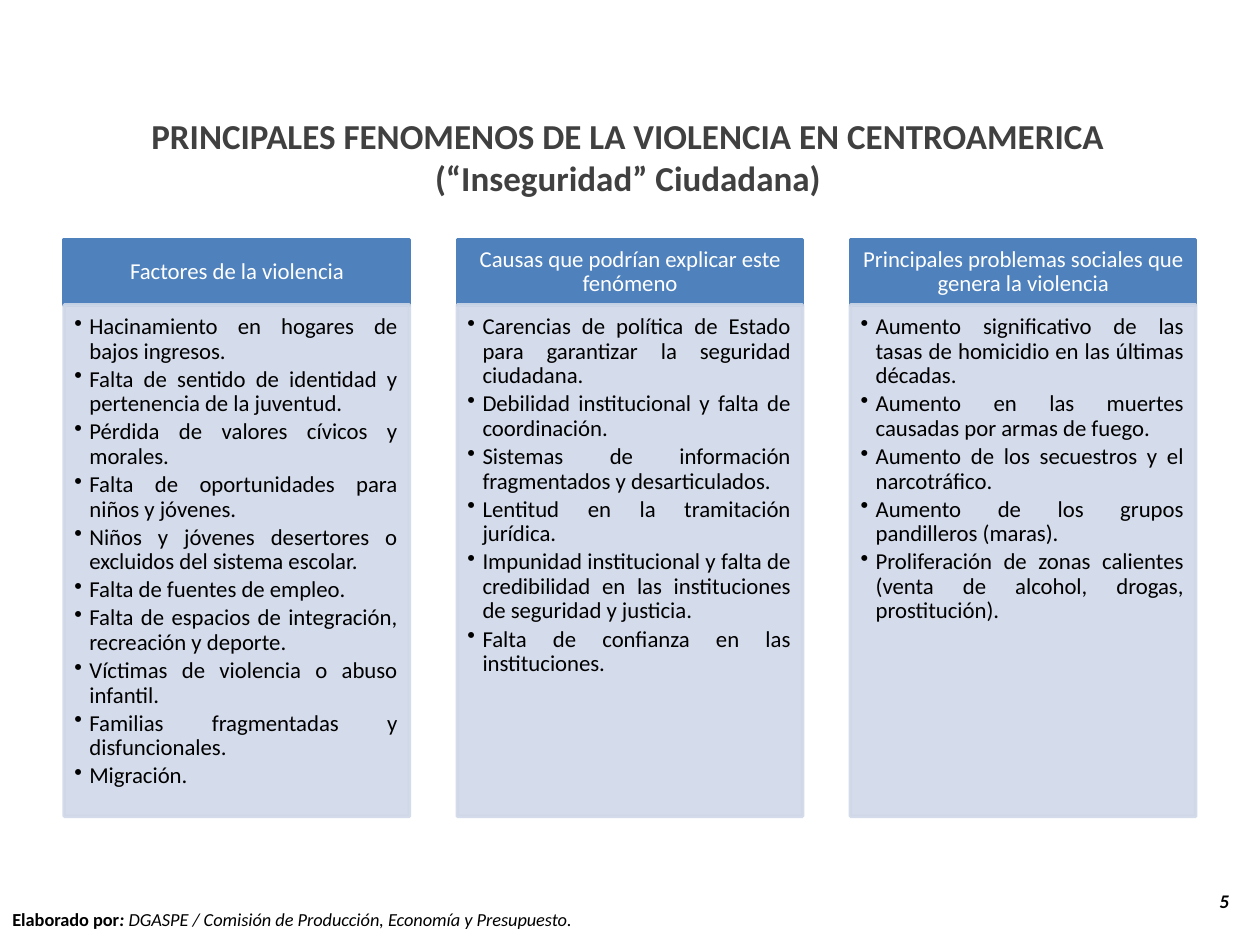
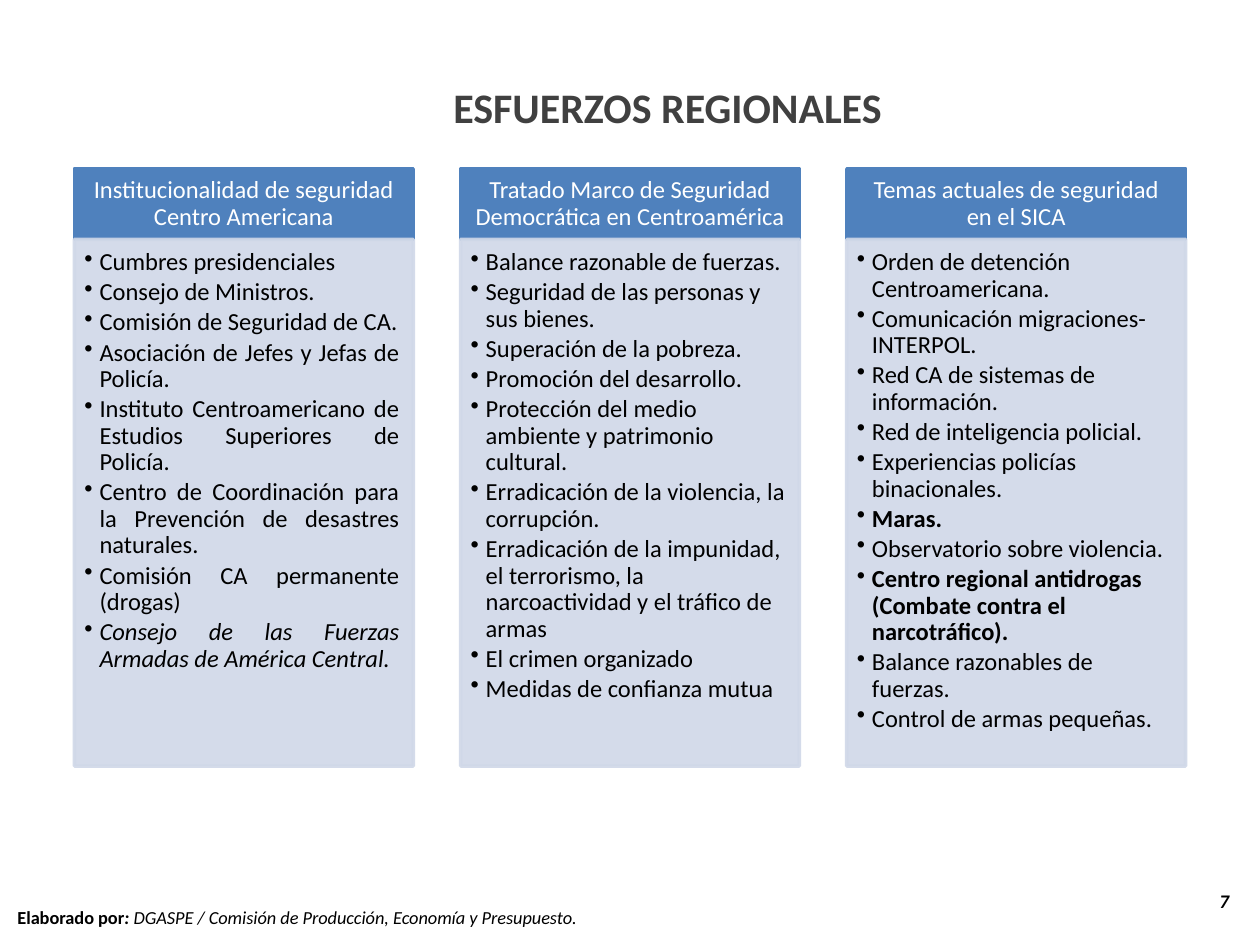
from dataclasses import dataclass

from lxml import etree
from pptx import Presentation
from pptx.dml.color import RGBColor
from pptx.enum.shapes import MSO_SHAPE
from pptx.enum.text import MSO_ANCHOR, MSO_AUTO_SIZE, PP_ALIGN
from pptx.oxml.ns import qn
from pptx.util import Inches, Pt

RECT = MSO_SHAPE.RECTANGLE
LEFT, CENTER, JUSTIFY = PP_ALIGN.LEFT, PP_ALIGN.CENTER, PP_ALIGN.JUSTIFY
TOP, MIDDLE = MSO_ANCHOR.TOP, MSO_ANCHOR.MIDDLE
FIT_TEXT = MSO_AUTO_SIZE.SHAPE_TO_FIT_TEXT


@dataclass(frozen=True)
class Theme:
    font: str = "Calibri"
    title: RGBColor = RGBColor(0x40, 0x40, 0x40)
    header: RGBColor = RGBColor(0x4F, 0x81, 0xBD)
    panel: RGBColor = RGBColor(0xD0, 0xD8, 0xE8)
    white: RGBColor = RGBColor(0xFF, 0xFF, 0xFF)
    black: RGBColor = RGBColor(0, 0, 0)
    panel_opacity: int = 90
    border: float = 2
    credit_size: float = 10.5
    number_size: float = 11


THEME = Theme()


@dataclass(frozen=True)
class ColumnLayout:
    """Three columns centred on the slide; lengths in inches, size in points."""
    left: float
    top: float
    width: float
    header_height: float
    panel_height: float
    size: float
    side_inset: float
    bottom_inset: float

    def column_left(self, index):
        pitch = 5 - self.width / 2 - self.left
        return self.left + index * pitch


VIOLENCE_LAYOUT = ColumnLayout(0.51, 1.9, 2.74, 0.52, 4.06, 13, 0.1, 0.11)
EFFORTS_LAYOUT = ColumnLayout(0.59, 1.34, 2.69, 0.56, 4.18, 14, 0.11, 0.12)

# Each column: header, alignment of its items, items.
VIOLENCE_COLUMNS = [
    ("Factores de la violencia", JUSTIFY, [
        "Hacinamiento en hogares de bajos ingresos.",
        "Falta de sentido de identidad y pertenencia de la juventud.",
        "Pérdida de valores cívicos y morales.",
        "Falta de oportunidades para niños y jóvenes.",
        "Niños y jóvenes desertores o excluidos del sistema escolar.",
        "Falta de fuentes de empleo.",
        "Falta de espacios de integración, recreación y deporte.",
        "Víctimas de violencia o abuso infantil.",
        "Familias fragmentadas y disfuncionales.",
        "Migración.",
    ]),
    ("Causas que podrían explicar este fenómeno", JUSTIFY, [
        "Carencias de política de Estado para garantizar la seguridad ciudadana.",
        "Debilidad institucional y falta de coordinación.",
        "Sistemas de información fragmentados y desarticulados.",
        "Lentitud en la tramitación jurídica.",
        "Impunidad institucional y falta de credibilidad en las instituciones "
        "de seguridad y justicia.",
        "Falta de confianza en las instituciones.",
    ]),
    ("Principales problemas sociales que genera la violencia", JUSTIFY, [
        "Aumento significativo de las tasas de homicidio en las últimas décadas.",
        "Aumento en las muertes causadas por armas de fuego.",
        "Aumento de los secuestros y el narcotráfico.",
        "Aumento de los grupos pandilleros (maras).",
        "Proliferación de zonas calientes (venta de alcohol, drogas, prostitución).",
    ]),
]

EFFORTS_COLUMNS = [
    ("Institucionalidad de seguridad Centro Americana", JUSTIFY, [
        "Cumbres presidenciales",
        "Consejo de Ministros.",
        "Comisión de Seguridad de CA.",
        "Asociación de Jefes y Jefas de Policía.",
        "Instituto Centroamericano de Estudios Superiores de Policía.",
        "Centro de Coordinación para la Prevención de desastres naturales.",
        "Comisión CA permanente (drogas)",
        "Consejo de las Fuerzas Armadas de América Central.",
    ]),
    ("Tratado Marco de Seguridad Democrática en Centroamérica", LEFT, [
        "Balance razonable de fuerzas.",
        "Seguridad de las personas y sus bienes.",
        "Superación de la pobreza.",
        "Promoción del desarrollo.",
        "Protección del medio ambiente y patrimonio cultural.",
        "Erradicación de la violencia, la corrupción.",
        "Erradicación de la impunidad, el terrorismo, la narcoactividad y el "
        "tráfico de armas",
        "El crimen organizado",
        "Medidas de confianza mutua",
    ]),
    ("Temas actuales de seguridad en el SICA", LEFT, [
        "Orden de detención Centroamericana.",
        "Comunicación migraciones-INTERPOL.",
        "Red CA de sistemas de información.",
        "Red de inteligencia policial.",
        "Experiencias policías binacionales.",
        "Maras.",
        "Observatorio sobre violencia.",
        "Centro regional antidrogas (Combate contra el narcotráfico).",
        "Balance razonables de fuerzas.",
        "Control de armas pequeñas.",
    ]),
]

BOLD_ITEMS = {
    "Maras.",
    "Centro regional antidrogas (Combate contra el narcotráfico).",
}
ITALIC_ITEMS = {"Consejo de las Fuerzas Armadas de América Central."}


def add_run(p, text, size, color, bold=False, italic=False):
    r = p.add_run()
    r.text = text
    font = r.font
    font.name, font.size, font.color.rgb = THEME.font, Pt(size), color
    font.bold, font.italic = bold, italic


def next_paragraph(tf, index):
    return tf.paragraphs[0] if index == 0 else tf.add_paragraph()


def add_label(slide, left, top, width, height):
    """Add a one-line-per-paragraph text box and return its text frame."""
    tf = slide.shapes.add_textbox(
        Inches(left), Inches(top), Inches(width), Inches(height)).text_frame
    tf.word_wrap = False
    tf.auto_size = FIT_TEXT
    return tf


def add_title(slide, box, lines, size, align=LEFT):
    tf = add_label(slide, *box)
    for i, line in enumerate(lines):
        p = next_paragraph(tf, i)
        p.alignment = align
        add_run(p, line, size, THEME.title, bold=True)


def add_footer(slide, left, top, number):
    p = add_label(slide, left, top, 4.73, 0.28).paragraphs[0]
    for text, bold, italic in [
        ("Elaborado por", True, False),
        (": ", True, True),
        ("DGASPE / Comisión de Producción, Economía y Presupuesto.", False, True),
    ]:
        add_run(p, text, THEME.credit_size, THEME.black, bold, italic)
    p = add_label(slide, 9.58, 7.01, 0.28, 0.29).paragraphs[0]
    add_run(p, str(number), THEME.number_size, THEME.black, True, True)


def set_opacity(sp, percent):
    """Apply one opacity to the fill and the line."""
    for color in list(sp.element.spPr.iter(qn("a:srgbClr"))):
        etree.SubElement(color, qn("a:alpha"), val=str(percent * 1000))


def add_box(slide, box, color, insets, anchor):
    sp = slide.shapes.add_shape(RECT, *[Inches(v) for v in box])
    sp.shadow.inherit = False
    sp.fill.solid()
    sp.fill.fore_color.rgb = color
    sp.line.color.rgb = color
    sp.line.width = Pt(THEME.border)
    tf = sp.text_frame
    tf.word_wrap = True
    tf.vertical_anchor = anchor
    (tf.margin_left, tf.margin_top,
     tf.margin_right, tf.margin_bottom) = [Inches(v) for v in insets]
    return sp


def add_bullet(p, text, size, align):
    pPr = p._p.get_or_add_pPr()
    pPr.set("marL", str(Inches(0.12)))
    pPr.set("indent", str(-Inches(0.12)))
    etree.SubElement(pPr, qn("a:buChar"), char="•")
    p.level = 1
    p.alignment = align
    p.line_spacing = 0.9
    p.space_after = Pt(round(size * 0.15, 2))
    add_run(p, text, size, THEME.black,
            text in BOLD_ITEMS, text in ITALIC_ITEMS)


def add_column(slide, layout, index, header, align, items):
    left, side = layout.column_left(index), layout.side_inset

    sp = add_box(slide, (left, layout.top, layout.width, layout.header_height),
                 THEME.header, (side, 0.06, side, 0.06), MIDDLE)
    p = sp.text_frame.paragraphs[0]
    p.alignment = CENTER
    p.line_spacing = 0.9
    add_run(p, header, layout.size, THEME.white)

    panel_top = layout.top + layout.header_height
    sp = add_box(slide, (left, panel_top, layout.width, layout.panel_height),
                 THEME.panel, (0.08, 0.08, side, layout.bottom_inset), TOP)
    set_opacity(sp, THEME.panel_opacity)
    for i, item in enumerate(items):
        add_bullet(next_paragraph(sp.text_frame, i), item, layout.size, align)


def add_columns(slide, layout, columns):
    for i, column in enumerate(columns):
        add_column(slide, layout, i, *column)


def main():
    prs = Presentation()
    prs.slide_width, prs.slide_height = Inches(10), Inches(7.5)
    blank = prs.slide_layouts[6]

    slide = prs.slides.add_slide(blank)
    add_title(slide, (1.07, 0.86, 7.83, 0.77), [
        "PRINCIPALES FENOMENOS DE LA VIOLENCIA EN CENTROAMERICA",
        "(“Inseguridad” Ciudadana)",
    ], 20, CENTER)
    add_columns(slide, VIOLENCE_LAYOUT, VIOLENCE_COLUMNS)
    add_footer(slide, 0, 7.16, 5)

    slide = prs.slides.add_slide(blank)
    add_title(slide, (3.5, 0.6, 3.64, 0.5), ["ESFUERZOS REGIONALES"], 24)
    add_columns(slide, EFFORTS_LAYOUT, EFFORTS_COLUMNS)
    add_footer(slide, 0.04, 7.14, 7)

    prs.save("out.pptx")


if __name__ == "__main__":
    main()
